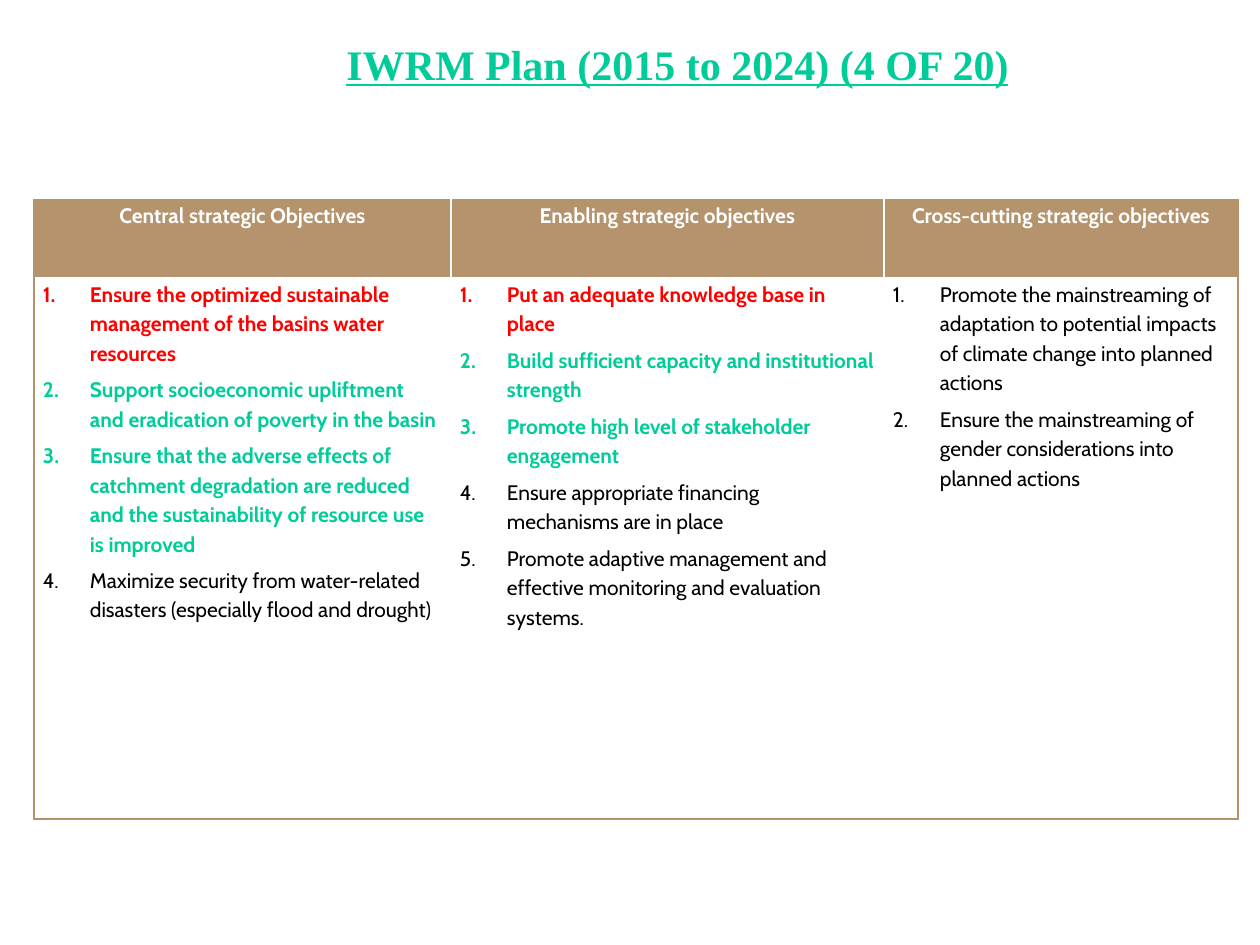
"""Build the IWRM plan slide with its table of strategic objectives."""
from lxml import etree
from pptx import Presentation
from pptx.dml.color import RGBColor
from pptx.enum.text import MSO_ANCHOR, PP_ALIGN
from pptx.oxml.ns import qn
from pptx.util import Pt

CENTER = PP_ALIGN.CENTER
MIDDLE = MSO_ANCHOR.MIDDLE
SCALE = 914400 / 126
PLAIN = "{2D5ABB26-0587-4C30-8999-92F81FD0307C}"
COLORS = {"tan": "B4936D", "white": "FFFFFF", "red": "FF0000",
          "green": "00CC99", "black": "000000"}
HEADS = ["Central strategic Objectives", "Enabling strategic objectives",
         "Cross-cutting strategic objectives"]
GOALS = [
    [("red", "Ensure the optimized sustainable management of the basins water resources"),
     ("green", "Support socioeconomic upliftment and eradication of poverty in the basin"),
     ("green", "Ensure that the adverse effects of catchment degradation are reduced "
               "and the sustainability of resource use is improved"),
     ("black", "Maximize security from water-related disasters "
               "(especially flood and drought)")],
    [("red", "Put an adequate knowledge base in place"),
     ("green", "Build sufficient capacity and institutional strength"),
     ("green", "Promote high level of stakeholder engagement"),
     ("black", "Ensure appropriate financing mechanisms are in place"),
     ("black", "Promote adaptive management and effective monitoring "
               "and evaluation systems.")],
    [("black", "Promote the mainstreaming of adaptation to potential impacts "
               "of climate change into planned actions"),
     ("black", "Ensure the mainstreaming of gender considerations into planned actions")],
]
WIDTHS = [417, 433, 354]
HEIGHTS = [79, 541]


def px(n):
    return round(n * SCALE)


def style(para, font, size, color, bold):
    for run in para.runs:
        run.font.name = font
        run.font.size = Pt(size)
        run.font.bold = bold
        run.font.color.rgb = RGBColor.from_string(COLORS[color])


prs = Presentation()
prs.slide_width, prs.slide_height = px(1260), px(945)
slide = prs.slides.add_slide(prs.slide_layouts[5])

title = slide.shapes.title
title.left, title.top, title.width, title.height = map(px, (210, 32, 935, 63))
frame = title.text_frame
frame.text = "IWRM Plan (2015 to 2024) (4 OF 20)"
frame.vertical_anchor = MIDDLE
para = frame.paragraphs[0]
para.alignment = CENTER
style(para, "Times New Roman", 24, "green", True)
para.runs[0].font.underline = True

table = slide.shapes.add_table(2, 3, px(34), px(199), px(sum(WIDTHS)),
                               px(sum(HEIGHTS))).table
table._tbl.tblPr.find(qn("a:tableStyleId")).text = PLAIN
table.first_row = table.horz_banding = False
for col, width in zip(table.columns, WIDTHS):
    col.width = px(width)
for row, height in zip(table.rows, HEIGHTS):
    row.height = px(height)

for r in range(2):
    for c in range(3):
        cell = table.cell(r, c)
        cell.margin_left = cell.margin_right = px(9)
        cell.margin_top = cell.margin_bottom = 0
        head = r == 0
        items = [("white", HEADS[c])] if head else GOALS[c]
        frame = cell.text_frame
        frame.text = "\n".join(text for _, text in items)
        for i, (para, (color, _)) in enumerate(zip(frame.paragraphs, items)):
            para.line_spacing = 1.15
            para.space_before = Pt(2 if i else 0)
            para.space_after = Pt(6 if head else 2)
            if head:
                para.alignment = CENTER
            else:
                props = para._p.get_or_add_pPr()
                props.set("marL", str(px(47)))
                props.set("indent", str(-px(47)))
                etree.SubElement(props, qn("a:buFont"), typeface="+mj-lt")
                etree.SubElement(props, qn("a:buAutoNum"), type="arabicPeriod")
            style(para, "Cabin", 12, color, color != "black")

        edges = {}
        if c == 0:
            edges["L"] = ("tan", 1.5 if head else 1)
        elif head:
            edges["L"] = ("white", 1)
        if c == 2:
            edges["R"] = ("tan", 1.5 if head else 1)
        elif head:
            edges["R"] = ("white", 1)
        if head:
            edges["B"] = ("white", 1)
        else:
            edges["T"] = ("white", 1)
            edges["B"] = ("tan", 1)
        props = cell._tc.get_or_add_tcPr()
        for side, (color, width) in edges.items():
            line = etree.SubElement(props, qn("a:ln" + side), w=str(Pt(width)))
            fill = etree.SubElement(line, qn("a:solidFill"))
            etree.SubElement(fill, qn("a:srgbClr"), val=COLORS[color])
        cell.fill.solid()
        cell.fill.fore_color.rgb = RGBColor.from_string(COLORS["tan" if head else "white"])

prs.save("out.pptx")
